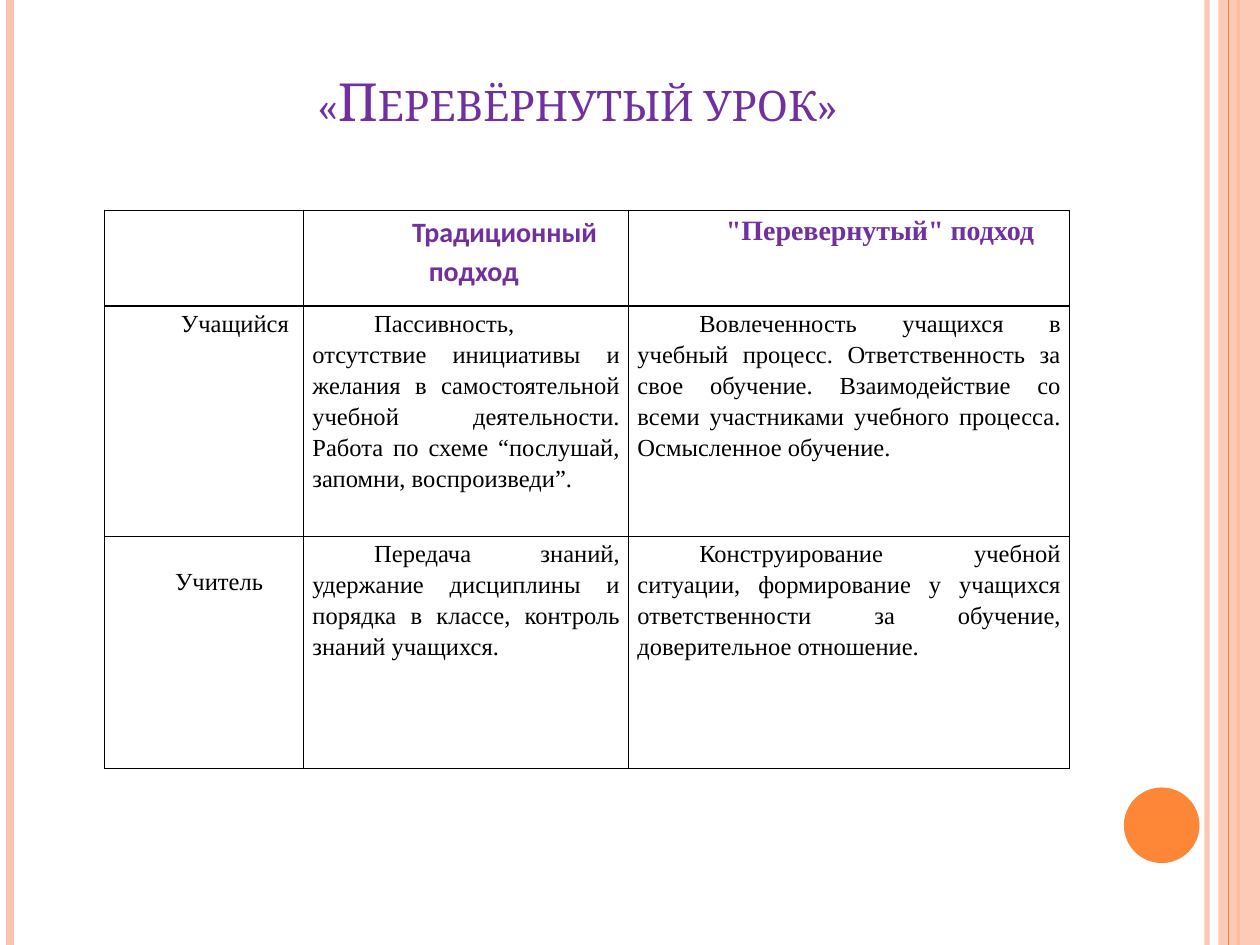
from lxml.etree import SubElement
from pptx import Presentation
from pptx.dml.color import RGBColor
from pptx.enum.shapes import MSO_CONNECTOR, MSO_SHAPE
from pptx.enum.text import MSO_ANCHOR, PP_ALIGN
from pptx.oxml.ns import qn
from pptx.util import Inches, Pt

PEACH = RGBColor(0xFE, 0xC3, 0xAE)
ORANGE = RGBColor(0xFE, 0x86, 0x37)
PURPLE = RGBColor(0x70, 0x30, 0xA0)
BLACK = RGBColor(0, 0, 0)
SERIF = "Times New Roman"

TITLE = "«Перевёрнутый урок»"
ROWS = [
    ["", "Традиционный подход", "\"Перевернутый\" подход"],
    ["Учащийся",
     "Пассивность, отсутствие инициативы и желания в самостоятельной учебной "
     "деятельности. Работа по схеме “послушай, запомни, воспроизведи”.",
     "Вовлеченность учащихся в учебный процесс. Ответственность за свое обучение. "
     "Взаимодействие со всеми участниками учебного процесса. Осмысленное обучение."],
    ["Учитель",
     "Передача знаний, удержание дисциплины и порядка в классе, контроль знаний учащихся.",
     "Конструирование учебной ситуации, формирование у учащихся ответственности "
     "за обучение, доверительное отношение."],
]
COLUMN_WIDTHS = [1.58, 2.58, 3.5]
ROW_HEIGHTS = [0.76, 1.83, 1.84]
LEFT_STRIPES = [(9.58, PEACH, 3, 93), (0.08, PEACH, 4.5, 100), (9.83, ORANGE, 1.5, 100)]
INNER_STRIPE = (9.75, ORANGE, 0.75, 100)


def set_opacity(properties, percent):
    color = next(properties.iter(qn("a:srgbClr")))
    SubElement(color, qn("a:alpha")).set("val", str(percent * 1000))


def add_stripe(slide, x, color, width, opacity):
    stripe = slide.shapes.add_connector(
        MSO_CONNECTOR.STRAIGHT, Inches(x), 0, Inches(x), Inches(7.5))
    stripe.line.color.rgb = color
    stripe.line.width = Pt(width)
    properties = stripe._element.spPr
    if opacity < 100:
        set_opacity(properties, opacity)
    SubElement(properties, qn("a:effectLst"))


def add_plain_shape(slide, kind, box, color):
    shape = slide.shapes.add_shape(kind, *map(Inches, box))
    shape.shadow.inherit = False
    shape.fill.solid()
    shape.fill.fore_color.rgb = color
    shape.line.fill.background()
    return shape


def add_borders(cell):
    properties = cell._tc.get_or_add_tcPr()
    for index, side in enumerate(("lnL", "lnR", "lnT", "lnB")):
        border = properties.makeelement(qn(f"a:{side}"), {"w": str(Pt(1))})
        fill = SubElement(border, qn("a:solidFill"))
        SubElement(fill, qn("a:srgbClr")).set("val", str(BLACK))
        properties.insert(index, border)


def fill_cell(cell, text, row, column):
    header = row == 0
    cell.fill.background()
    add_borders(cell)
    cell.margin_left = cell.margin_right = Inches(0.07)
    cell.margin_top = Inches(0.22 if text == "Учитель" else 0)
    cell.margin_bottom = 0
    cell.text = text
    paragraph = cell.text_frame.paragraphs[0]
    centered = header or text == "Учащийся"
    paragraph.alignment = PP_ALIGN.CENTER if centered else PP_ALIGN.JUSTIFY
    paragraph.line_spacing = 1.15
    indents = paragraph._p.get_or_add_pPr()
    indents.set("marL", str(Inches(0.12 if header and column == 1 else 0)))
    indents.set("indent", str(Inches(0.49)))
    font = paragraph.font
    font.name = "Calibri" if header and column == 1 else SERIF
    font.size = Pt(16 if header else 14)
    font.bold = header
    font.color.rgb = PURPLE if header else BLACK


def add_title(slide):
    box = slide.shapes.add_textbox(Inches(0.5), Inches(0.3), Inches(8.17), Inches(1.25))
    frame = box.text_frame
    frame.word_wrap = True
    frame.vertical_anchor = MSO_ANCHOR.BOTTOM
    frame.margin_bottom = Inches(0.5)
    paragraph = frame.paragraphs[0]
    paragraph.alignment = PP_ALIGN.CENTER
    run = paragraph.add_run()
    run.text = TITLE
    run.font.name = "Cambria"
    run.font.size = Pt(30)
    run.font.color.rgb = PURPLE
    run._r.get_or_add_rPr().set("cap", "small")


def add_comparison(slide):
    table = slide.shapes.add_table(
        len(ROWS), len(COLUMN_WIDTHS), Inches(0.83), Inches(1.67),
        Inches(sum(COLUMN_WIDTHS)), Inches(sum(ROW_HEIGHTS))).table
    table.horz_banding = False
    for column, width in zip(table.columns, COLUMN_WIDTHS):
        column.width = Inches(width)
    for row, height in zip(table.rows, ROW_HEIGHTS):
        row.height = Inches(height)
    for row, texts in enumerate(ROWS):
        for column, text in enumerate(texts):
            fill_cell(table.cell(row, column), text, row, column)


def main():
    presentation = Presentation()
    presentation.slide_width = Inches(10)
    presentation.slide_height = Inches(7.5)
    slide = presentation.slides.add_slide(presentation.slide_layouts[6])
    for stripe in LEFT_STRIPES:
        add_stripe(slide, *stripe)
    band = add_plain_shape(slide, MSO_SHAPE.RECTANGLE, (9.67, 0, 0.33, 7.5), PEACH)
    set_opacity(band._element.spPr, 87)
    add_stripe(slide, *INNER_STRIPE)
    add_plain_shape(slide, MSO_SHAPE.OVAL, (8.92, 6.25, 0.6, 0.6), ORANGE)
    add_title(slide)
    add_comparison(slide)
    presentation.save("out.pptx")


if __name__ == "__main__":
    main()
